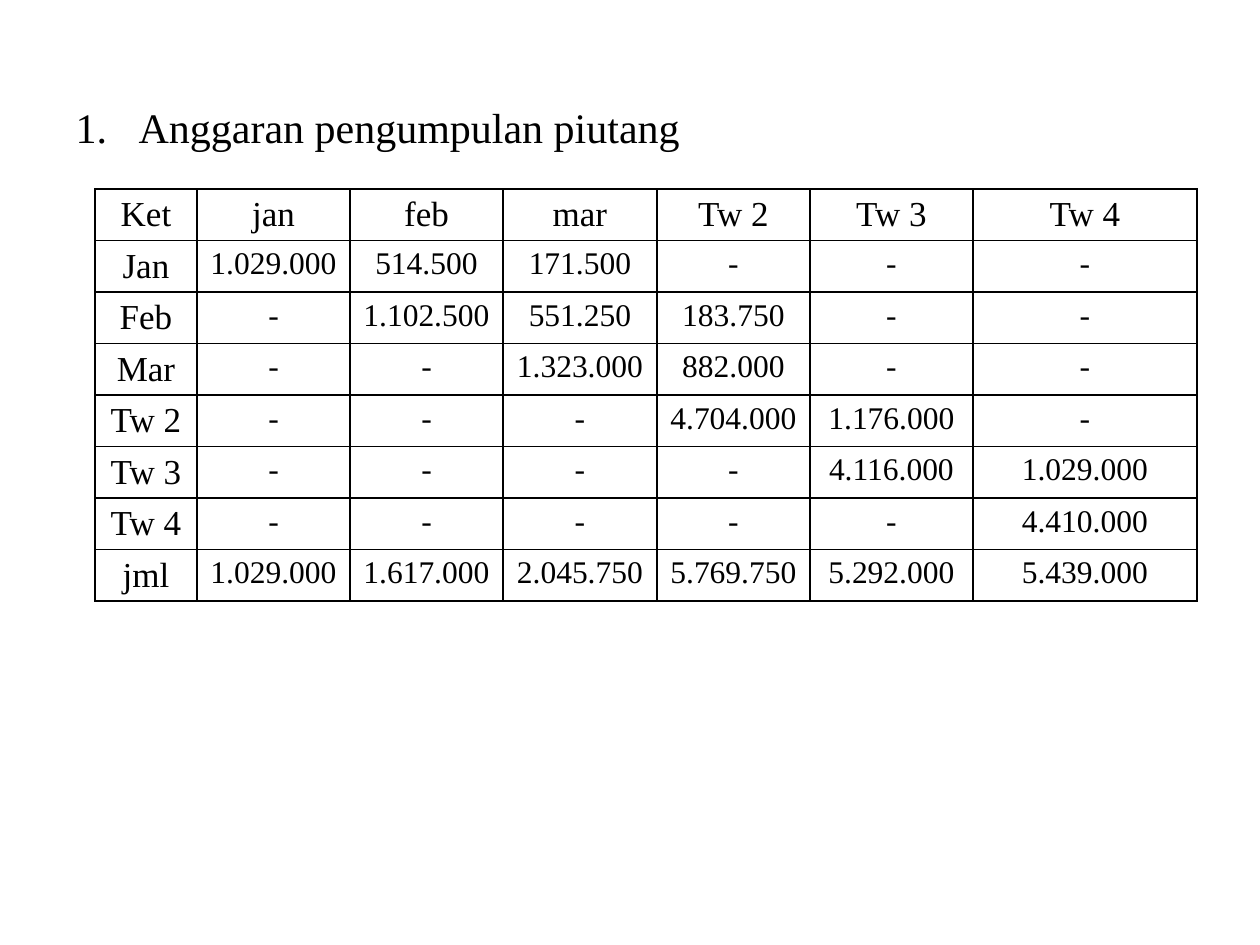
from lxml.etree import SubElement as Sub
from pptx import Presentation
from pptx.dml.color import RGBColor
from pptx.enum.text import PP_ALIGN as Align
from pptx.oxml.ns import qn
from pptx.util import Pt

PX = 914400 / 126
BLACK = RGBColor(0, 0, 0)
FONT = "Times New Roman"
COLS = [102, 153, 153, 154, 153, 163, 224]
ROWS = [
    ["Ket", "jan", "feb", "mar", "Tw 2", "Tw 3", "Tw 4"],
    ["Jan", "1.029.000", "514.500", "171.500", "-", "-", "-"],
    ["Feb", "-", "1.102.500", "551.250", "183.750", "-", "-"],
    ["Mar", "-", "-", "1.323.000", "882.000", "-", "-"],
    ["Tw 2", "-", "-", "-", "4.704.000", "1.176.000", "-"],
    ["Tw 3", "-", "-", "-", "-", "4.116.000", "1.029.000"],
    ["Tw 4", "-", "-", "-", "-", "-", "4.410.000"],
    ["jml", "1.029.000", "1.617.000", "2.045.750", "5.769.750", "5.292.000",
     "5.439.000"],
]


def px(num):
    """Turn px into EMU."""
    return round(num * PX)


def write(frame, text, size=18, align=None):
    """Put formatted text in the first paragraph and return it."""
    para = frame.paragraphs[0]
    para.alignment = align
    run = para.add_run()
    run.text = text
    run.font.size = Pt(size)
    run.font.name = FONT
    run.font.color.rgb = BLACK
    return para


def edge(cell):
    """Draw a black line on each side of a cell."""
    props = cell._tc.get_or_add_tcPr()
    for i, side in enumerate(("lnL", "lnR", "lnT", "lnB")):
        line = props.makeelement(qn(f"a:{side}"), {"w": str(Pt(1))})
        props.insert(i, line)
        fill = Sub(line, qn("a:solidFill"))
        Sub(fill, qn("a:srgbClr"), val=str(BLACK))


def head(slide, x, y, w, h):
    """Place the numbered heading in the body placeholder."""
    body = slide.placeholders[1]
    body.left, body.top, body.width, body.height = map(px, (x, y, w, h))
    para = write(body.text_frame, "Anggaran pengumpulan piutang", size=24)
    props = para._p.get_or_add_pPr()
    props.set("marL", str(px(63)))
    props.set("indent", str(px(-63)))
    Sub(props, qn("a:buFont"), typeface=FONT)
    Sub(props, qn("a:buAutoNum"), type="arabicPeriod")


def grid(slide, x, y, w, h):
    """Place the table of receivables."""
    box = slide.shapes.add_table(len(ROWS), len(COLS), *map(px, (x, y, w, h)))
    table = box.table
    table.first_row = table.horz_banding = False
    for col, wide in zip(table.columns, COLS):
        col.width = px(wide)
    for r, row in enumerate(ROWS):
        for c, text in enumerate(row):
            cell = table.cell(r, c)
            cell.fill.background()
            edge(cell)
            size = 20 if r == 0 or c == 0 else 18
            write(cell.text_frame, text, size=size, align=Align.CENTER)


def main():
    """Build and save the slide."""
    deck = Presentation()
    deck.slide_width, deck.slide_height = px(1260), px(945)
    slide = deck.slides.add_slide(deck.slide_layouts[1])
    title = slide.shapes.title._element
    title.getparent().remove(title)
    head(slide, 63, 95, 1134, 750)
    grid(slide, 95, 189, sum(COLS), 51 * len(ROWS))
    deck.save("out.pptx")


if __name__ == "__main__":
    main()
